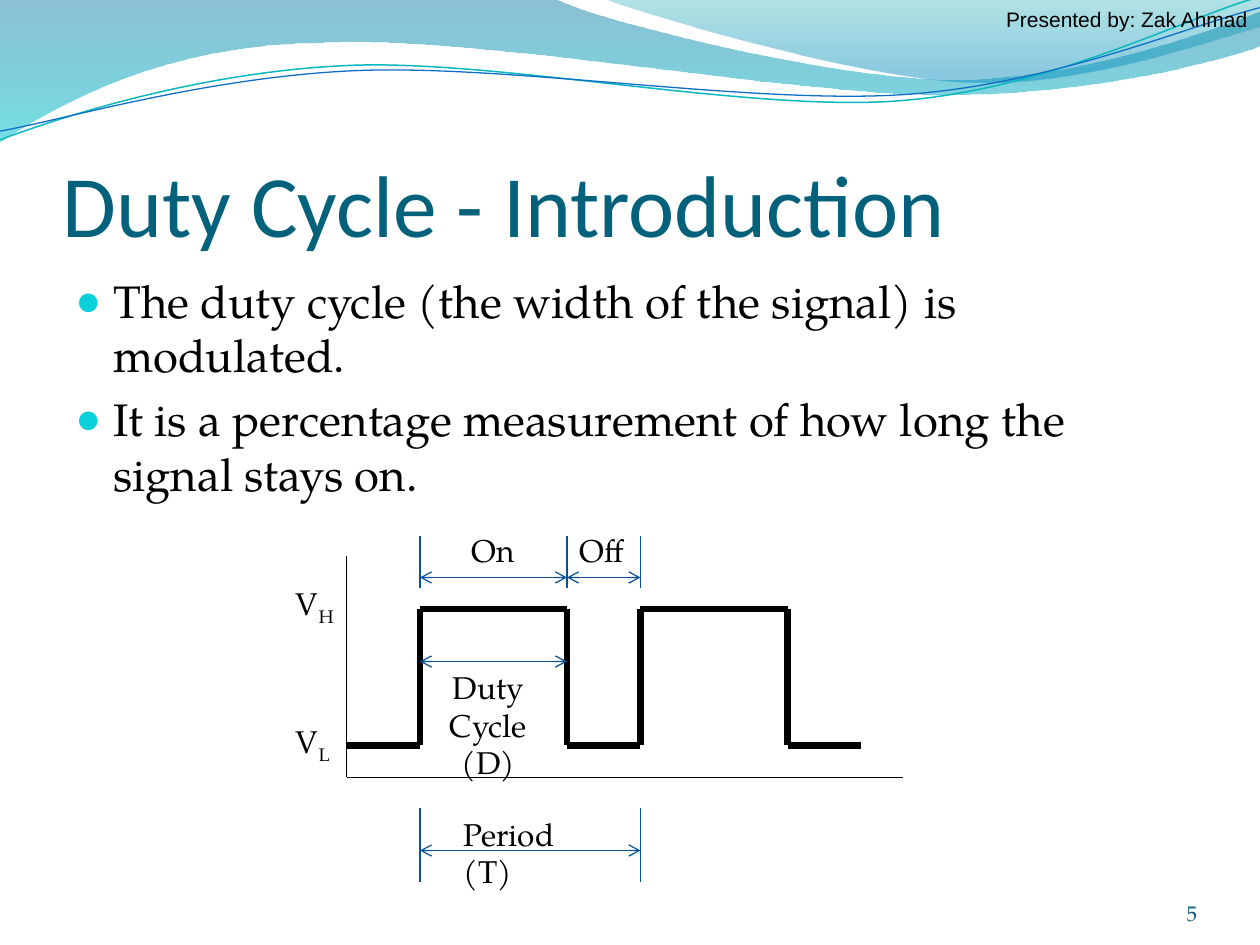
from math import cos, radians, sin
from lxml import etree
from pptx import Presentation
from pptx.dml.color import RGBColor
from pptx.enum.shapes import MSO_CONNECTOR
from pptx.enum.text import MSO_ANCHOR, PP_ALIGN
from pptx.oxml.ns import qn
from pptx.util import Inches, Pt

LEFT, MID, RIGHT = PP_ALIGN.LEFT, PP_ALIGN.CENTER, PP_ALIGN.RIGHT
TOP, BASE = MSO_ANCHOR.TOP, MSO_ANCHOR.BOTTOM
STRAIGHT = MSO_CONNECTOR.STRAIGHT
SERIF = "TeX Gyre Pagella"
UNIT = Inches(1) / 12
PAD = (0.1, 0.05, 0.1, 0.05)
rgb = RGBColor.from_string

deck = Presentation()
deck.slide_width, deck.slide_height = Inches(10), Inches(7.5)
slide = deck.slides.add_slide(deck.slide_layouts[6])
shapes = slide.shapes


def write(box, lines, size, font=SERIF, color="000000", align=LEFT, anchor=TOP, pad=PAD):
    frame = shapes.add_textbox(*[round(n * UNIT) for n in box]).text_frame
    frame.word_wrap = True
    frame.vertical_anchor = anchor
    (frame.margin_left, frame.margin_top,
     frame.margin_right, frame.margin_bottom) = [Inches(n) for n in pad]
    for i, line in enumerate(lines):
        par = frame.paragraphs[0] if i == 0 else frame.add_paragraph()
        par.alignment = align
        par.font.size, par.font.name = Pt(size), font
        par.font.color.rgb = rgb(color)
        par.add_run().text = line
    return frame


def rule(x1, y1, x2, y2, color, width, arrows=False):
    line = shapes.add_connector(STRAIGHT, *[round(n * UNIT) for n in (x1, y1, x2, y2)])
    line.line.color.rgb = rgb(color)
    line.line.width = Pt(width)
    etree.SubElement(line._element.spPr, qn("a:effectLst"))
    if arrows:
        ln = line.line._get_or_add_ln()
        for end in ("a:headEnd", "a:tailEnd"):
            etree.SubElement(ln, qn(end), type="arrow")


waves = [
    ([[(0, -0.01)], [(4.4, -0.01)],
      [(4.76, 0.17), (6.64, 0.63), (7.58, 0.63)],
      [(8.53, 0.63), (9.58, 0.26), (10, 0.09)], [(10.01, 0.36)],
      [(9.83, 0.44), (8.7, 0.76), (7.46, 0.75)],
      [(6.22, 0.75), (3.82, 0.28), (2.57, 0.34)],
      [(1.29, 0.35), (0.46, 0.83), (-0.01, 1.13)]],
     [(0, "0074A1", 45), (1, "00C6CF", 55)], None, 0),
    ([[(4.79, -0.01)],
      [(5.09, 0.11), (6.82, 0.62), (7.69, 0.65)],
      [(8.56, 0.69), (9.61, 0.32), (10, 0.21)], [(10, 0)]],
     [(0, "00A1A9", 30), (0.8, "008BBF", 45)], None, 0),
    ([[(0, 1.11)],
      [(0.48, 0.93), (1.58, 0.57), (2.77, 0.52)],
      [(3.95, 0.47), (5.93, 0.89), (7.13, 0.8)],
      [(8.33, 0.71), (9.38, 0.15), (9.98, -0.02)]], None, ("0AB8BF", 0.85), -2.7),
    ([[(0, 1.04)],
      [(0.47, 0.96), (1.64, 0.61), (2.83, 0.56)],
      [(4.03, 0.51), (5.97, 0.83), (7.17, 0.75)],
      [(8.36, 0.67), (9.41, 0.21), (10, 0.06)]], None, ("0F6FC6", 0.75), -2.7),
]
for parts, stops, pen, turn in waves:
    c, s = cos(radians(turn)), sin(radians(turn))
    mx, my = (4.99, 0.58) if turn else (0, 0)
    dots = [(round(1000 * (mx + (x - mx) * c + (y - my) * s)),
             round(1000 * (my + (y - my) * c - (x - mx) * s)))
            for part in parts for x, y in part]
    form = shapes.build_freeform(*dots[0], scale=Inches(1) / 1000)
    form.add_line_segments(dots[1:], close=bool(stops))
    wave = form.convert_to_shape()
    wave.rotation = turn % 360
    wave.shadow.inherit = False
    nodes = iter(list(wave._element.spPr.iter(qn("a:lnTo"))))
    for part in parts[1:]:
        head, *rest = [next(nodes) for dot in part]
        if rest:
            head.tag = qn("a:cubicBezTo")
        for node in rest:
            head.append(node[0])
            node.getparent().remove(node)
    if stops:
        wave.line.fill.background()
        wave.fill.gradient()
        wave.fill.gradient_angle = 270
        for stop, (place, color, alpha) in zip(wave.fill.gradient_stops, stops):
            stop.position = place
            stop.color.rgb = rgb(color)
        tones = list(wave._element.spPr.iter(qn("a:srgbClr")))
        for tone, (place, color, alpha) in zip(tones, stops):
            etree.SubElement(tone, qn("a:alpha"), val=str(alpha * 1000))
    else:
        wave.fill.background()
        wave.line.color.rgb = rgb(pen[0])
        wave.line.width = Pt(pen[1])

write((6, 9.25, 108, 15), ["Duty Cycle - Introduction"], 50, "Calibri", "04617B",
      anchor=BASE, pad=(0, 0.05, 0, 0))
body = write((6, 25.4, 103, 22.6), [
    "The duty cycle (the width of the signal) is modulated.",
    "It is a percentage measurement of how long the signal stays on."], 26)
for par in body.paragraphs:
    par.space_before = Pt(5.2)
    props = par._p.get_or_add_pPr()
    props.set("marL", str(Inches(0.3)))
    props.set("indent", str(-Inches(0.3)))
    tint = etree.Element(qn("a:buClr"))
    etree.SubElement(tint, qn("a:srgbClr"), val="0BD0D9")
    size = etree.Element(qn("a:buSzPct"), val="95000")
    face = etree.Element(qn("a:buFont"), typeface="Arial")
    sign = etree.Element(qn("a:buChar"), char="●")
    spot = props.index(props.find(qn("a:spcBef"))) + 1
    props[spot:spot] = [tint, size, face, sign]

HIGH, LOW = 58, 71
START, RISE, FALL, NEXT, DROP, STOP = 33, 40, 54, 61, 75, 82
for a, b, y in [(START, RISE, LOW), (FALL, NEXT, LOW), (DROP, STOP, LOW),
                (RISE, FALL, HIGH), (NEXT, DROP, HIGH)]:
    rule(a, y, b, y, "000000", 3.5)
for x in (RISE, FALL, NEXT, DROP):
    rule(x, HIGH, x, LOW, "000000", 3.5)
rule(START, 74, 86, 74, "000000", 0.5)
rule(START, 74, START, 53, "000000", 0.5)

for x, a, b in [(RISE, 77, 84), (NEXT, 77, 84), (RISE, 51, 56), (FALL, 51, 56), (NEXT, 51, 56)]:
    rule(x, a, x, b, "095295", 0.75)
for a, b, y in [(RISE, NEXT, 81), (RISE, FALL, 63), (RISE, FALL, 55), (FALL, NEXT, 55)]:
    rule(a, y, b, y, "095295", 0.75, True)

for box, text, align in [((43, 77, 16, 4.8), "Period (T)", LEFT),
                         ((39, 63, 15, 8.5), "Duty Cycle (D)", MID),
                         ((RISE, 50, 14, 5), "On", MID),
                         ((FALL, 50, 7, 4.8), "Off", LEFT)]:
    write(box, [text], 18, align=align)
for y, sub in [(68.2, "L"), (55, "H")]:
    par = write((27, y, 7, 4.8), ["V"], 18).paragraphs[0]
    run = par.add_run()
    run.text = sub
    run.font._element.set("baseline", "-25000")

write((104, 83.4, 10, 4.8), ["5"], 12, color="045D75", align=RIGHT, anchor=BASE, pad=(0, 0, 0, 0))
write((80, 0, 40, 3.6), ["Presented by: Zak Ahmad"], 12, "Arial", align=RIGHT)

deck.save("out.pptx")
